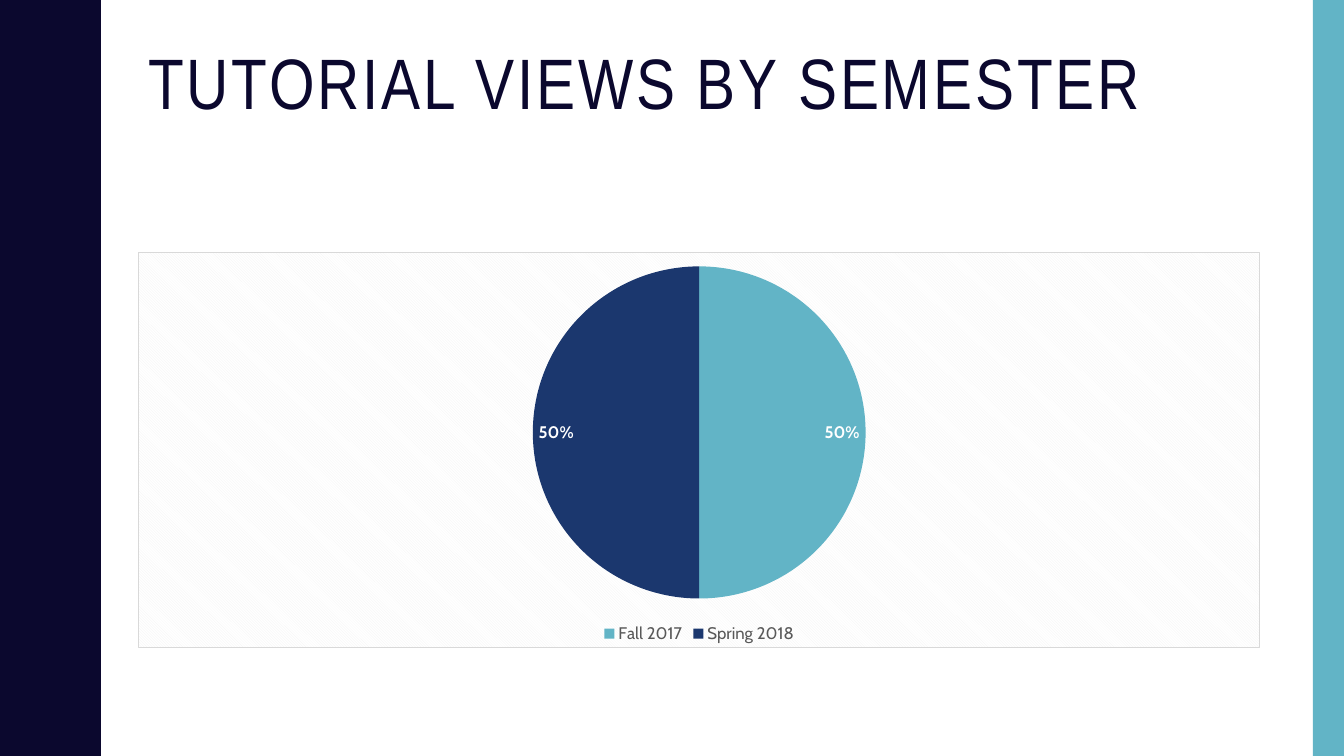
import pptx
import pptx.util
import pptx.dml.color
import pptx.chart.data
import pptx.enum.chart
import pptx.enum.shapes
import pptx.enum.text
import pptx.oxml

Inches, Pt = pptx.util.Inches, pptx.util.Pt
hues = {"navy": "0B082E", "blue": "1B376E", "teal": "62B4C6", "white": "FFFFFF",
        "pale": "F2F2F2", "edge": "D9D9D9", "gray": "595959", "black": "000000"}
title = "TUTORIAL VIEWS BY SEMESTER"
terms = [("Fall 2017", 50, "teal"), ("Spring 2018", 50, "blue")]
wide, high = 13.33, 7.5
left, width = 1.37, 11.13
bar = 0.31
cycle = 1.5
bend = [(0.78, 0), (0.78, 0.07), (0.79, 0.14), (0.8, 0.2), (0.81, 0.25),
        (0.83, 0.29), (0.85, 0.33), (0.89, 0.42), (0.93, 0.5), (0.95, 0.55),
        (0.96, 0.61), (0.97, 0.68), (0.97, 0.75)]
fonts = {
    "title": {"name": "Arial Narrow", "size": 51, "hue": "navy"},
    "chart": {"name": "Cabin", "size": 10, "hue": "black"},
    "key": {"name": "Cabin", "size": 12, "hue": "gray"},
    "label": {"name": "Cabin", "size": 12, "hue": "white", "bold": True},
}


def tint(name):
    return pptx.dml.color.RGBColor.from_string(hues[name])


def style(font, kind):
    for key, val in fonts[kind].items():
        if key == "hue":
            font.color.rgb = tint(val)
        else:
            setattr(font, key, Pt(val) if key == "size" else val)


def paint(shape, hue):
    shape.shadow.inherit = False
    shape.fill.solid()
    shape.fill.fore_color.rgb = tint(hue)
    shape.line.fill.background()


def place(shape, top, height):
    shape.left, shape.top = Inches(left), Inches(top)
    shape.width, shape.height = Inches(width), Inches(height)


def add_wave(slide):
    loop = bend + [(x, cycle - y) for x, y in bend[-2::-1]]
    count = round(high / cycle)
    edge = [(x, n * cycle + y) for n in range(count) for x, y in loop]
    form = slide.shapes.build_freeform(0, 0, scale=Inches(1))
    form.add_line_segments(edge + [(0, high)], close=True)
    paint(form.convert_to_shape(), "navy")


def add_bar(slide):
    kind = pptx.enum.shapes.MSO_SHAPE.RECTANGLE
    shape = slide.shapes.add_shape(
        kind, Inches(wide - bar), 0, Inches(bar), Inches(high))
    paint(shape, "teal")


def add_title(slide):
    head = slide.shapes.title
    place(head, 0.42, 1.63)
    frame = head.text_frame
    frame.text = title
    frame.word_wrap = True
    frame.auto_size = pptx.enum.text.MSO_AUTO_SIZE.NONE
    frame.vertical_anchor = pptx.enum.text.MSO_ANCHOR.TOP
    line = frame.paragraphs[0]
    line.alignment = pptx.enum.text.PP_ALIGN.LEFT
    line.line_spacing = 0.9
    style(line.runs[0].font, "title")
    line.runs[0].font._element.set("spc", "200")


def add_pie(slide):
    data = pptx.chart.data.CategoryChartData()
    data.categories = [term[0] for term in terms]
    data.add_series("Series 1", [term[1] for term in terms])
    frame = slide.shapes.add_chart(
        pptx.enum.chart.XL_CHART_TYPE.PIE, 0, 0, Inches(1), Inches(1), data)
    place(frame, 2.5, 3.93)
    chart = frame.chart
    chart.has_title = False
    style(chart.font, "chart")
    chart.has_legend = True
    chart.legend.position = pptx.enum.chart.XL_LEGEND_POSITION.BOTTOM
    chart.legend.include_in_layout = False
    style(chart.legend.font, "key")
    plot = chart.plots[0]
    plot.vary_by_categories = True
    for num, term in enumerate(terms):
        part = plot.series[0].points[num].format
        part.fill.solid()
        part.fill.fore_color.rgb = tint(term[2])
        part.line.fill.background()
    plot.has_data_labels = True
    labels = plot.data_labels
    looks = {"show_percentage": True, "show_value": False,
             "number_format": "0%", "number_format_is_linked": False,
             "position": pptx.enum.chart.XL_LABEL_POSITION.INSIDE_END}
    for key, val in looks.items():
        setattr(labels, key, val)
    style(labels.font, "label")
    add_back(chart)


def add_back(chart):
    root = chart._chartSpace
    space = "http://schemas.openxmlformats.org/drawingml/2006/"
    back = pptx.oxml.parse_xml(
        f'<c:spPr xmlns:c="{space}chart" xmlns:a="{space}main">'
        f'<a:pattFill prst="dkDnDiag">'
        f'<a:fgClr><a:srgbClr val="{hues["pale"]}"/></a:fgClr>'
        f'<a:bgClr><a:srgbClr val="{hues["white"]}"/></a:bgClr></a:pattFill>'
        f'<a:ln w="{Pt(0.75)}"><a:solidFill><a:srgbClr val="{hues["edge"]}"/>'
        f'</a:solidFill></a:ln></c:spPr>')
    root.find(f"{{{space}chart}}chart").addnext(back)


def main():
    deck = pptx.Presentation()
    deck.slide_width, deck.slide_height = Inches(wide), Inches(high)
    slide = deck.slides.add_slide(deck.slide_layouts[5])
    for step in (add_wave, add_bar, add_title, add_pie):
        step(slide)
    deck.save("out.pptx")


if __name__ == "__main__":
    main()
